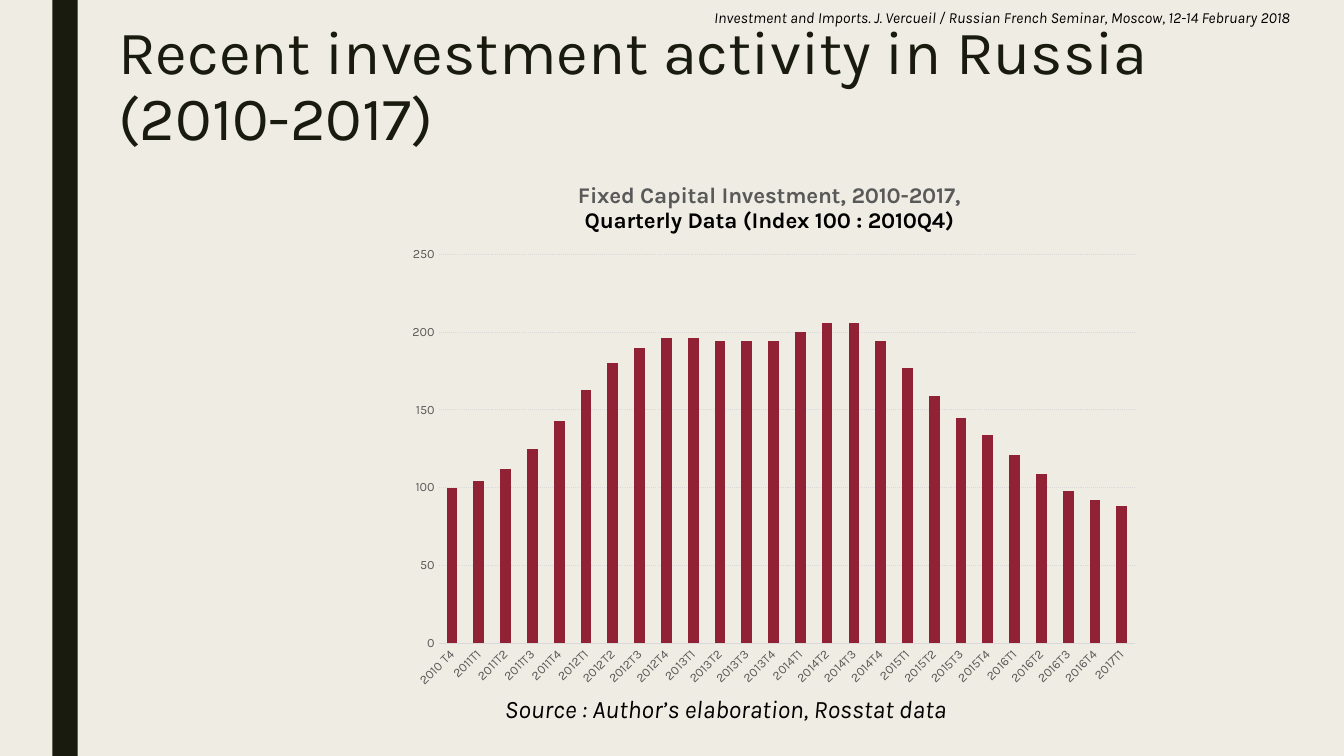
from dataclasses import dataclass

from lxml import etree
from pptx import Presentation
from pptx import util as u
from pptx.chart.data import CategoryChartData
from pptx.dml.color import RGBColor
from pptx.enum import chart as charts, dml, shapes, text
from pptx.oxml.ns import qn


@dataclass(frozen=True)
class Theme:
    font: str = "Karla"
    paper: str = "EFEDE3"
    dark: str = "191B0E"
    black: str = "000000"
    grey: str = "595959"
    rule: str = "D9D9D9"
    bars: str = "912236"
    title_size: int = 44
    source_size: int = 18
    chart_title_size: int = 16
    header_size: int = 11
    chart_size: int = 10
    axis_size: int = 9


def apply(target, values):
    for name, value in values.items():
        setattr(target, name, value)


class Page:
    def __init__(self, deck, theme):
        self.theme = theme
        self.slide = deck.slides.add_slide(deck.slide_layouts[5])
        self.paint(self.slide.background.fill, theme.paper)

    def paint(self, fill, color):
        fill.solid()
        fill.fore_color.rgb = RGBColor.from_string(color)

    def style(self, font, size, color, **values):
        apply(font, {"name": self.theme.font, "size": u.Pt(size), **values})
        font.color.rgb = RGBColor.from_string(color)

    def rule(self, line):
        line.color.rgb = RGBColor.from_string(self.theme.rule)
        line.width = u.Pt(0.75)

    def bar(self, *area):
        bar = self.slide.shapes.add_shape(shapes.MSO_SHAPE.RECTANGLE, *map(u.Cm, area))
        bar.shadow.inherit = False
        self.paint(bar.fill, self.theme.dark)
        bar.line.fill.background()

    def title(self, words, *area):
        box = self.slide.shapes.title
        apply(box, dict(zip(("left", "top", "width", "height"), map(u.Cm, area))))
        frame = box.text_frame
        apply(frame, {"word_wrap": True, "auto_size": text.MSO_AUTO_SIZE.NONE,
                      "vertical_anchor": text.MSO_ANCHOR.TOP})
        para = frame.paragraphs[0]
        apply(para, {"alignment": text.PP_ALIGN.LEFT, "line_spacing": 0.89})
        span = para.add_run()
        span.text = words
        self.style(span.font, self.theme.title_size, self.theme.dark)

    def note(self, words, size, *area):
        frame = self.slide.shapes.add_textbox(*map(u.Cm, area)).text_frame
        apply(frame, {"word_wrap": False,
                      "auto_size": text.MSO_AUTO_SIZE.SHAPE_TO_FIT_TEXT})
        span = frame.paragraphs[0].add_run()
        span.text = words
        self.style(span.font, size, self.theme.black, italic=True)

    def place(self, parent, index, **values):
        """Fix a chart part at fractions of the chart area."""
        for old in parent.findall(qn("c:layout")):
            parent.remove(old)
        layout = etree.Element(qn("c:layout"))
        manual = etree.SubElement(layout, qn("c:manualLayout"))
        for name, value in values.items():
            etree.SubElement(manual, qn(f"c:{name}")).set("val", str(value))
        parent.insert(index, layout)

    def column_chart(self, heading, quarters, values, *area):
        theme = self.theme
        data = CategoryChartData()
        data.categories = quarters
        data.add_series("Fixed capital investment", values)
        chart = self.slide.shapes.add_chart(
            charts.XL_CHART_TYPE.COLUMN_CLUSTERED, *map(u.Cm, area), data).chart
        self.style(chart.font, theme.chart_size, theme.black)
        apply(chart, {"has_legend": False, "has_title": True})
        plot_area = next(chart.element.iter(qn("c:plotArea")))

        # Columns
        plot = chart.plots[0]
        apply(plot, {"gap_width": 150, "vary_by_categories": False})
        self.paint(plot.series[0].format.fill, theme.bars)

        # Axes
        for axis in (chart.category_axis, chart.value_axis):
            apply(axis, {"major_tick_mark": charts.XL_TICK_MARK.NONE,
                         "minor_tick_mark": charts.XL_TICK_MARK.NONE})
            self.style(axis.tick_labels.font, theme.axis_size, theme.grey)
        self.rule(chart.category_axis.format.line)
        labels = plot_area.find(qn("c:catAx")).find(qn("c:txPr"))
        labels.find(qn("a:bodyPr")).set("rot", "-2700000")
        apply(chart.value_axis, {"minimum_scale": 0, "maximum_scale": 250,
                                 "major_unit": 50, "has_major_gridlines": True})
        chart.value_axis.format.line.fill.background()
        grid = chart.value_axis.major_gridlines.format.line
        self.rule(grid)
        grid.dash_style = dml.MSO_LINE.ROUND_DOT

        # Two-tone heading
        frame = chart.chart_title.text_frame
        for index, (words, color) in enumerate(heading):
            para = frame.add_paragraph() if index else frame.paragraphs[0]
            para.alignment = text.PP_ALIGN.CENTER
            span = para.add_run()
            span.text = words
            self.style(span.font, theme.chart_title_size, color, bold=True)

        # Positions inside the chart
        title = next(chart.element.iter(qn("c:title")))
        self.place(title, 1, xMode="edge", yMode="edge", x=0.24, y=0.04)
        self.place(plot_area, 0, layoutTarget="inner", xMode="edge", yMode="edge",
                   x=0.06, y=0.18, w=0.92, h=0.72)


def main():
    theme = Theme()
    deck = Presentation()
    apply(deck, {"slide_width": u.Cm(33.87), "slide_height": u.Cm(19.05)})
    page = Page(deck, theme)

    # Side bar and title
    page.bar(1.32, 0, 0.64, 19.05)
    page.title("Recent investment activity in Russia (2010-2017)",
               2.72, 0.43, 26.67, 4.11)

    # Investment index by quarter
    quarters = ["2010 T4"]
    quarters += [f"{year}T{term}" for year in range(2011, 2017) for term in range(1, 5)]
    quarters.append("2017T1")
    index = [100, 104, 112, 125, 143, 163, 180, 190, 196, 196, 194, 194, 194,
             200, 206, 206, 194, 177, 159, 145, 134, 121, 109, 98, 92, 88]
    heading = [("Fixed Capital Investment, 2010-2017,", theme.grey),
               ("Quarterly Data (Index 100 : 2010Q4)", theme.black)]
    page.column_chart(heading, quarters, index, 9.91, 3.96, 19.08, 13.61)

    # Header and source
    page.note("Investment and Imports. J. Vercueil / Russian French Seminar, "
              "Moscow, 12-14 February 2018", theme.header_size, 17.75, 0.08, 16.1, 0.74)
    page.note("Source : Author’s elaboration, Rosstat data",
              theme.source_size, 12.47, 17.35, 12.14, 1.02)
    deck.save("out.pptx")


if __name__ == "__main__":
    main()
